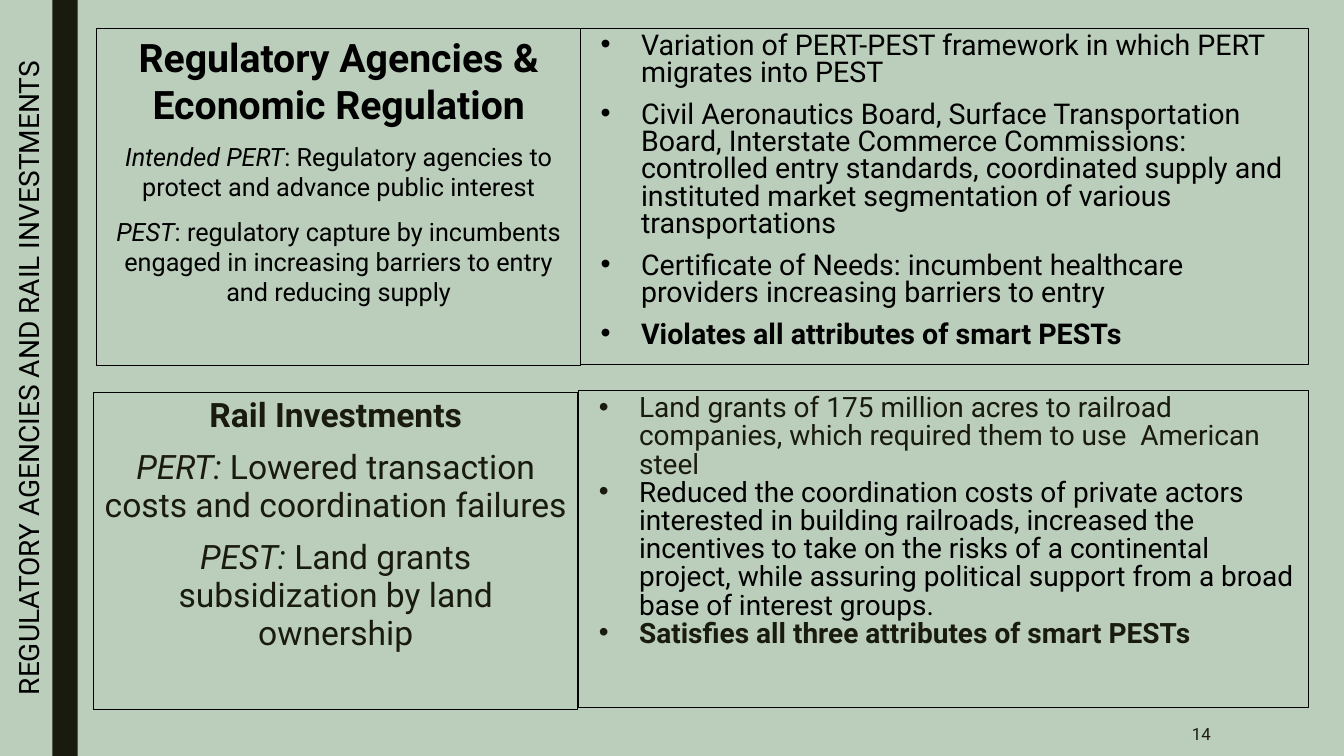
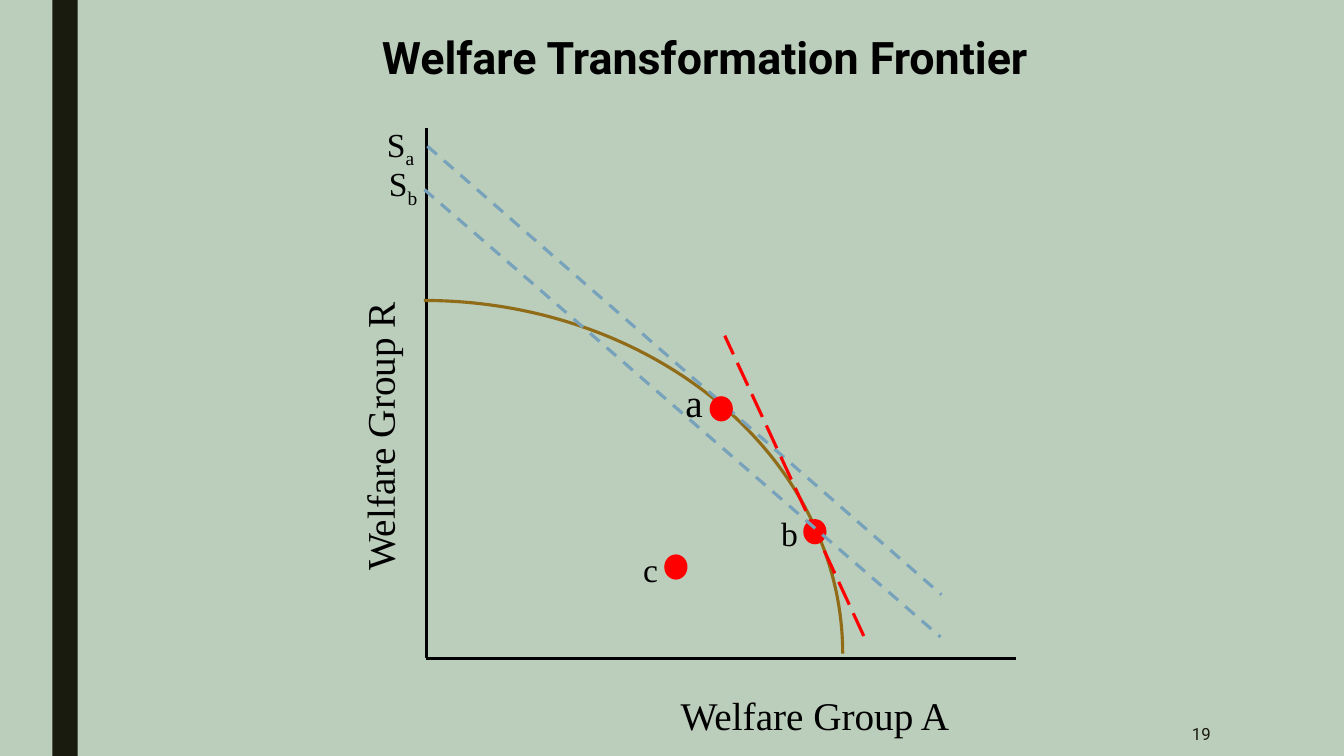
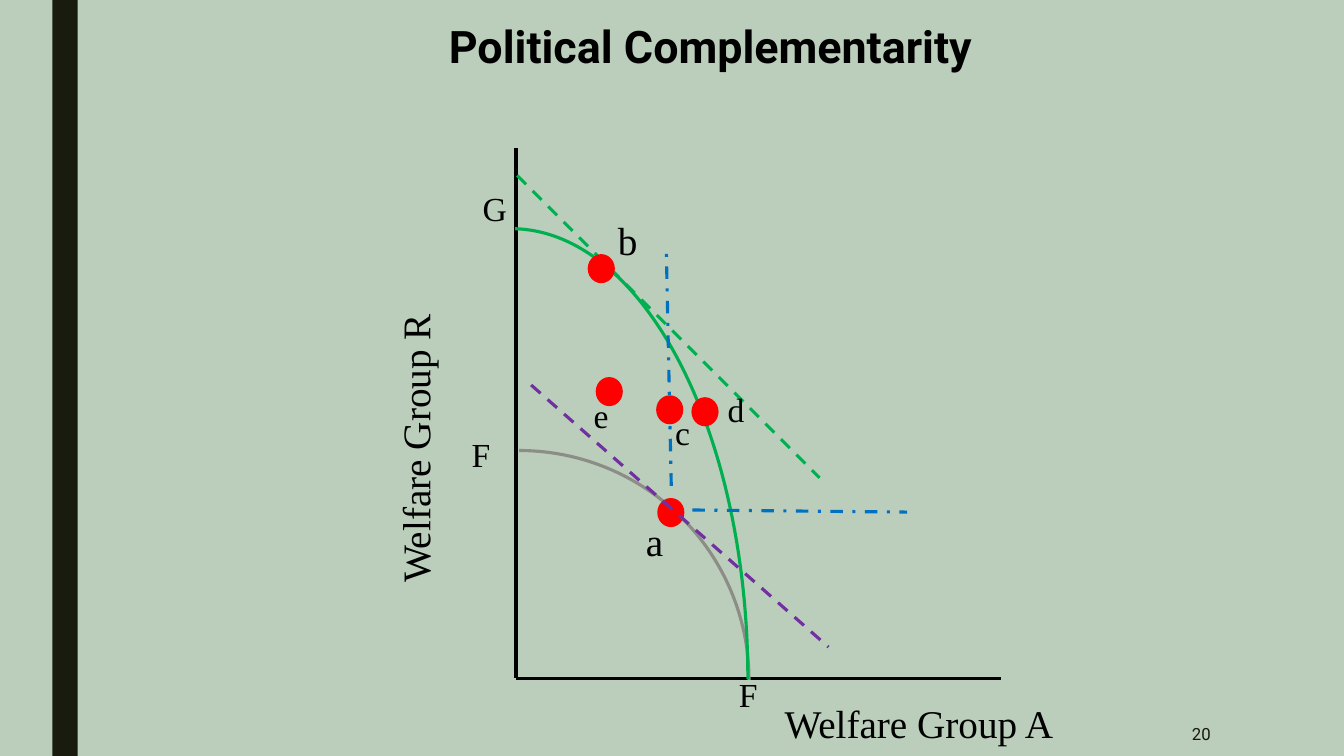
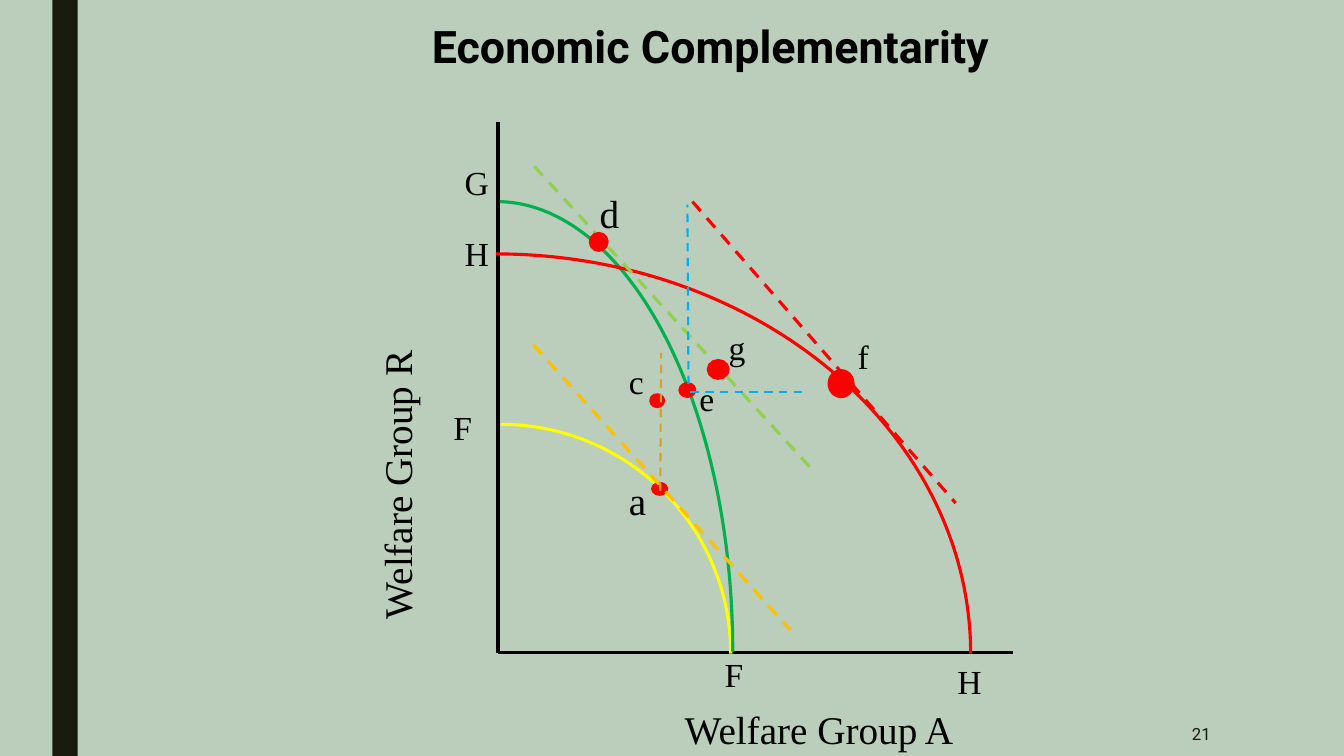
from lxml.etree import SubElement
from pptx import Presentation
from pptx.dml.color import RGBColor
from pptx.enum.dml import MSO_LINE as Dash
from pptx.enum.shapes import MSO_CONNECTOR, MSO_SHAPE
from pptx.enum.text import MSO_ANCHOR as Anchor, MSO_AUTO_SIZE, PP_ALIGN as Align
from pptx.oxml.ns import qn
from pptx.util import Pt

SANS, SERIF = "Roboto", "Times New Roman"
BACKGROUND, INK, BLACK = "BBCDBB", "191B0E", "000000"
RED, GREEN, BLUE, CYAN = "FF0000", "00B050", "0070C0", "00B0F0"
STEEL, LIME, AMBER, OCHRE, PURPLE = "77A2BB", "92D050", "FFC000", "D7A124", "7030A0"
COMPARISON, TITLE_ONLY = 4, 5
DOT_SIZE = (16.6, 18)

# Each paragraph is a list of (text, style) runs; style is "", "b" or "i",
# optionally followed by a colour of its own.
POLICY_SLIDE = {
    "title": "REGULATORY AGENCIES AND RAIL INVESTMENTS",
    "page": 14,
    "panels": [
        {"at": (69.1, 20.2, 345.6, 241.2), "head_size": 28, "size": 18,
         "color": BLACK, "spacing": 1, "gap": 10, "bullets": False,
         "paragraphs": [
             [("Regulatory Agencies & Economic Regulation", "b")],
             [("Intended PERT", "i"),
              (": Regulatory agencies to protect and advance public interest", "")],
             [("PEST", "i"),
              (": regulatory capture by incumbents engaged in increasing "
               "barriers to entry and reducing supply", "")]]},
        {"at": (414.7, 20.2, 519.8, 240.5), "head_size": 20.4, "size": 20.4,
         "color": BLACK, "spacing": 0.8, "gap": 10, "bullets": True,
         "paragraphs": [
             [("Variation of PERT-PEST framework in which PERT migrates into PEST", "")],
             [("Civil Aeronautics Board, Surface Transportation Board, Interstate "
               "Commerce Commissions: controlled entry standards, coordinated supply "
               "and instituted market segmentation of various transportations", "")],
             [("Certificate of Needs: incumbent healthcare providers increasing "
               "barriers to entry", "")],
             [("Violates all attributes of smart PESTs", "b")]]},
        {"at": (67, 280.1, 345.6, 226.8), "head_size": 24, "size": 24,
         "color": INK, "spacing": 0.94, "gap": 10, "bullets": False,
         "paragraphs": [
             [("Rail Investments", "b")],
             [("PERT: ", "i"),
              ("Lowered transaction costs and coordination failures", "")],
             [("PEST: ", "i"), ("Land grants subsidization by land ownership", "")]]},
        {"at": (413.3, 278.6, 521.3, 226.8), "head_size": 20, "size": 20,
         "color": INK, "spacing": 0.84, "gap": 0, "bullets": True,
         "paragraphs": [
             [("Land grants of 175 million acres to railroad companies, which "
               "required them to use  American steel", "")],
             [("Reduced the coordination costs of private actors interested in "
               "building railroads, increased the incentives to take on the risks of "
               "a continental project, while assuring political support from a broad "
               "base of interest groups.", "", BLACK)],
             [("Satisfies all three attributes of smart PESTs", "b")]]},
    ],
}

# axes: origin x, origin y, top, right
# curves: colour, point on the R axis, point on the A axis, start adjustment
# lines: colour, from, to, dash, width
# dots: centre, optionally width and height
# labels: text (an underscore starts a subscript), left, top, size
DIAGRAM_SLIDES = [
    {"title": "Welfare Transformation Frontier ", "title_top": 17.3, "page": 19,
     "axes": (304.6, 470.2, 91.4, 725.8),
     "group_r": (250.6, 200.2), "group_a": (582.1, 490.3),
     "curves": [("906B18", (302.8, 214.6), (602, 466.9), 162)],
     "lines_behind": [(STEEL, (305.3, 104.4), (672.5, 424.8), Dash.DASH, 2.25)],
     "dots": [(515.2, 292), (482.8, 405), (582.1, 379.8)], "dot_outline": 0,
     "lines_in_front": [
         (RED, (617, 454.3), (517.7, 239.8), Dash.LONG_DASH, 2.25),
         (STEEL, (303.1, 135.4), (671.8, 455), Dash.DASH, 2.25)],
     "labels": [("S_a", 269.3, 85, 24), ("S_b", 270.7, 113, 24),
                ("a", 482.4, 266.4, 28), ("b", 550.8, 362.9, 24),
                ("c", 452.2, 388.8, 24)]},
    {"title": "Political Complementarity", "title_top": 9.4, "page": 20,
     "axes": (368.6, 484.6, 105.8, 715),
     "group_r": (275.8, 208.8), "group_a": (656.3, 496.1),
     "curves": [("8C8D86", (370.8, 321.8), (535, 485.6), 162),
                (GREEN, (365.4, 163.4), (534.2, 484.9), 162.27)],
     "lines_behind": [
         (GREEN, (369.4, 125.3), (585.4, 341.3), Dash.DASH, 2.25),
         (BLUE, (479.5, 347), (475.9, 175.7), Dash.DASH_DOT, 2.25),
         (BLUE, (494.6, 364.3), (648, 365.8), Dash.DASH_DOT, 2.25)],
     "dots": [(479.2, 366.1), (429.5, 191.9), (503.6, 294.1), (478.4, 292.7),
              (435.2, 279.7)], "dot_outline": 2.75,
     "lines_in_front": [(PURPLE, (379.4, 275), (591.8, 462.2), Dash.DASH, 2.25)],
     "labels": [("G", 337.7, 131, 24), ("F", 329.8, 306.7, 24),
                ("F", 520.6, 478.1, 24), ("a", 454.3, 365.8, 28),
                ("b", 434.2, 151.2, 28), ("c", 475.2, 290.9, 24),
                ("d", 512.6, 274.3, 24), ("e", 416.9, 278.6, 24)]},
    {"title": "Economic Complementarity", "title_top": 9.4, "page": 21,
     "axes": (355.7, 466.2, 87.1, 723.6),
     "group_r": (262.8, 234.7), "group_a": (585, 500.4),
     "curves": [("FFFF00", (357.8, 303.1), (522, 466.9), 162),
                (GREEN, (354.6, 144), (523.4, 465.5), 162.27),
                (RED, (354.2, 181.4), (693.4, 466.9), 162)],
     "lines_behind": [(LIME, (381.6, 118.8), (579.6, 334.8), Dash.DASH, 2.25)],
     "dots": [(471.2, 349.2, 9.4, 7.2), (427.7, 172.8, 11.5, 11.5), (600.8, 274),
              (469.4, 286.2, 8.6, 7.9), (491, 278.6, 10.1, 8.6),
              (513, 263.9, 13.7, 12.2)], "dot_outline": 2.75,
     "lines_in_front": [
         (AMBER, (380.9, 246.2), (564.5, 450), Dash.DASH, 2.25),
         (RED, (494.6, 144), (682.6, 359.3), Dash.DASH, 2.25),
         (CYAN, (491.8, 274.3), (491, 146.2), Dash.DASH, 1.5),
         (CYAN, (493.2, 280.1), (575.3, 280.1), Dash.DASH, 1.5),
         (OCHRE, (471.6, 350.6), (472.3, 252), Dash.DASH, 1.5)],
     "labels": [("G", 324.7, 112.3, 24), ("H", 324.7, 162.7, 24),
                ("F", 316.8, 287.3, 24), ("F", 510.5, 463.7, 24),
                ("H", 676.8, 468.7, 24), ("a", 442.1, 337, 28),
                ("c", 442.1, 254.2, 24), ("d", 421.2, 131.8, 28),
                ("e", 492.5, 266.4, 24), ("f", 605.5, 236.2, 24),
                ("g", 513.4, 229.7, 24)]},
]


def rgb(color):
    return RGBColor.from_string(color)


def paint(format_part, color):
    """Give a fill or a line's fill one solid colour."""
    format_part.solid()
    format_part.fore_color.rgb = rgb(color)


def stroke(line, color, width):
    paint(line.fill, color)
    line.width = Pt(width)


def place(shape, left, top, width, height):
    shape.left, shape.top = Pt(left), Pt(top)
    shape.width, shape.height = Pt(width), Pt(height)


def style_font(font, name, size, color, bold=False, italic=False):
    font.name, font.size, font.bold, font.italic = name, Pt(size), bold, italic
    font.color.rgb = rgb(color)


def add_text(slide, text, at, font, size, color=BLACK, align=Align.LEFT, wrap=True):
    box = slide.shapes.add_textbox(*map(Pt, at))
    frame = box.text_frame
    frame.word_wrap = wrap
    paragraph = frame.paragraphs[0]
    paragraph.text = text
    paragraph.alignment = align
    style_font(paragraph.runs[0].font, font, size, color)
    return box


def set_up_master(prs, first_slide):
    """Put the background and the dark vertical band on the slide master."""
    master = prs.slide_master
    paint(master.background.fill, BACKGROUND)
    band = first_slide.shapes.add_shape(
        MSO_SHAPE.RECTANGLE, Pt(37.4), 0, Pt(18), prs.slide_height)
    band.shadow.inherit = False
    paint(band.fill, INK)
    band.line.fill.background()
    band.element.nvSpPr.cNvPr.set("id", "99")
    master.shapes.element.insert(2, band.element)


def add_slide(prs, layout, content, title_at, title_size, bold):
    slide = prs.slides.add_slide(prs.slide_layouts[layout])
    title = slide.shapes.title
    place(title, *title_at)
    frame = title.text_frame
    frame.text = content["title"]
    frame.vertical_anchor = Anchor.TOP
    frame.auto_size = MSO_AUTO_SIZE.NONE
    frame.paragraphs[0].alignment = Align.CENTER
    style_font(frame.paragraphs[0].runs[0].font, SANS, title_size, BLACK, bold)
    number = add_text(slide, str(content["page"]), (745.9, 508.3, 126, 31.7),
                      SANS, 12, INK, Align.RIGHT)
    number.text_frame.vertical_anchor = Anchor.MIDDLE
    return slide


def set_bullet(paragraph, color):
    """Add a hanging bullet, or none when there is no colour."""
    props = paragraph._p.get_or_add_pPr()
    props.set("marL", str(Pt(36 if color else 0)))
    props.set("indent", str(Pt(-28.8 if color else 0)))
    if color:
        SubElement(SubElement(props, qn("a:buClr")), qn("a:srgbClr")).set("val", color)
        SubElement(props, qn("a:buFont")).set("typeface", "Arial")
        SubElement(props, qn("a:buChar")).set("char", "•")
    else:
        SubElement(props, qn("a:buNone"))


def fill_panel(body, panel):
    place(body, *panel["at"])
    stroke(body.line, BLACK, 0.75)
    frame = body.text_frame
    frame.vertical_anchor = Anchor.TOP
    frame.auto_size = MSO_AUTO_SIZE.NONE
    for index, runs in enumerate(panel["paragraphs"]):
        paragraph = frame.add_paragraph() if index else frame.paragraphs[0]
        paragraph.alignment = Align.LEFT if panel["bullets"] else Align.CENTER
        paragraph.line_spacing = panel["spacing"]
        paragraph.space_before = Pt(panel["gap"] if index else 10)
        set_bullet(paragraph, panel["color"] if panel["bullets"] else None)
        for text, style, *own_color in runs:
            run = paragraph.add_run()
            run.text = text
            style_font(run.font, SANS, panel["size" if index else "head_size"],
                       own_color[0] if own_color else panel["color"],
                       style == "b", style == "i")


def add_line(slide, color, start, end, dash=None, width=2.25):
    line = slide.shapes.add_connector(
        MSO_CONNECTOR.STRAIGHT, *map(Pt, (*start, *end)))
    stroke(line.line, color, width)
    if dash:
        line.line.dash_style = dash
    SubElement(line.element.spPr, qn("a:effectLst"))


def add_curve(slide, color, start, end, start_adjustment):
    """Draw the quarter ellipse from the top point to the right-hand point."""
    (x0, y0), (x1, y1) = start, end
    curve = slide.shapes.add_shape(
        MSO_SHAPE.ARC, *map(Pt, (2 * x0 - x1, y0, 2 * (x1 - x0), 2 * (y1 - y0))))
    curve.shadow.inherit = False
    curve.adjustments[0] = start_adjustment
    curve.fill.background()
    stroke(curve.line, color, 2.25)


def add_dot(slide, outline, x, y, width=DOT_SIZE[0], height=DOT_SIZE[1]):
    dot = slide.shapes.add_shape(
        MSO_SHAPE.OVAL, *map(Pt, (x - width / 2, y - height / 2, width, height)))
    dot.shadow.inherit = False
    paint(dot.fill, RED)
    if outline:
        stroke(dot.line, RED, outline)
    else:
        dot.line.fill.background()


def add_label(slide, text, left, top, size):
    base, _, subscript = text.partition("_")
    box = add_text(slide, base, (left, top, 38, 1.2 * size + 7.2), SERIF, size,
                   wrap=False)
    if subscript:
        run = box.text_frame.paragraphs[0].add_run()
        run.text = subscript
        style_font(run.font, SERIF, size, BLACK)
        run._r.get_or_add_rPr().set("baseline", "-25000")


def add_diagram(slide, diagram):
    x, y, top, right = diagram["axes"]
    add_line(slide, BLACK, (x, top), (x, y))
    add_line(slide, BLACK, (right, y), (x, y))
    for curve in diagram["curves"]:
        add_curve(slide, *curve)
    for line in diagram["lines_behind"]:
        add_line(slide, *line)
    for dot in diagram["dots"]:
        add_dot(slide, diagram["dot_outline"], *dot)
    for line in diagram["lines_in_front"]:
        add_line(slide, *line)
    for label in diagram["labels"]:
        add_label(slide, *label)
    group_r = add_text(slide, "Welfare Group R", (*diagram["group_r"], 48.2, 223.2),
                       SERIF, 28, align=Align.CENTER)
    group_r.element.txBody.bodyPr.set("vert", "vert270")
    center, label_top = diagram["group_a"]
    add_text(slide, "Welfare Group A", (center - 120, label_top, 240, 41),
             SERIF, 28, align=Align.CENTER)


def main():
    prs = Presentation()
    prs.slide_width, prs.slide_height = Pt(960), Pt(540)

    policy = add_slide(prs, COMPARISON, POLICY_SLIDE,
                       (-249.8, 254.2, 540, 31.7), 20, False)
    policy.shapes.title.rotation = 270
    set_up_master(prs, policy)
    for index, panel in enumerate(POLICY_SLIDE["panels"], start=1):
        fill_panel(policy.placeholders[index], panel)

    for diagram in DIAGRAM_SLIDES:
        slide = add_slide(prs, TITLE_ONLY, diagram,
                          (54.7, diagram["title_top"], 905.8, 86.4), 32, True)
        add_diagram(slide, diagram)
    prs.save("out.pptx")


if __name__ == "__main__":
    main()
